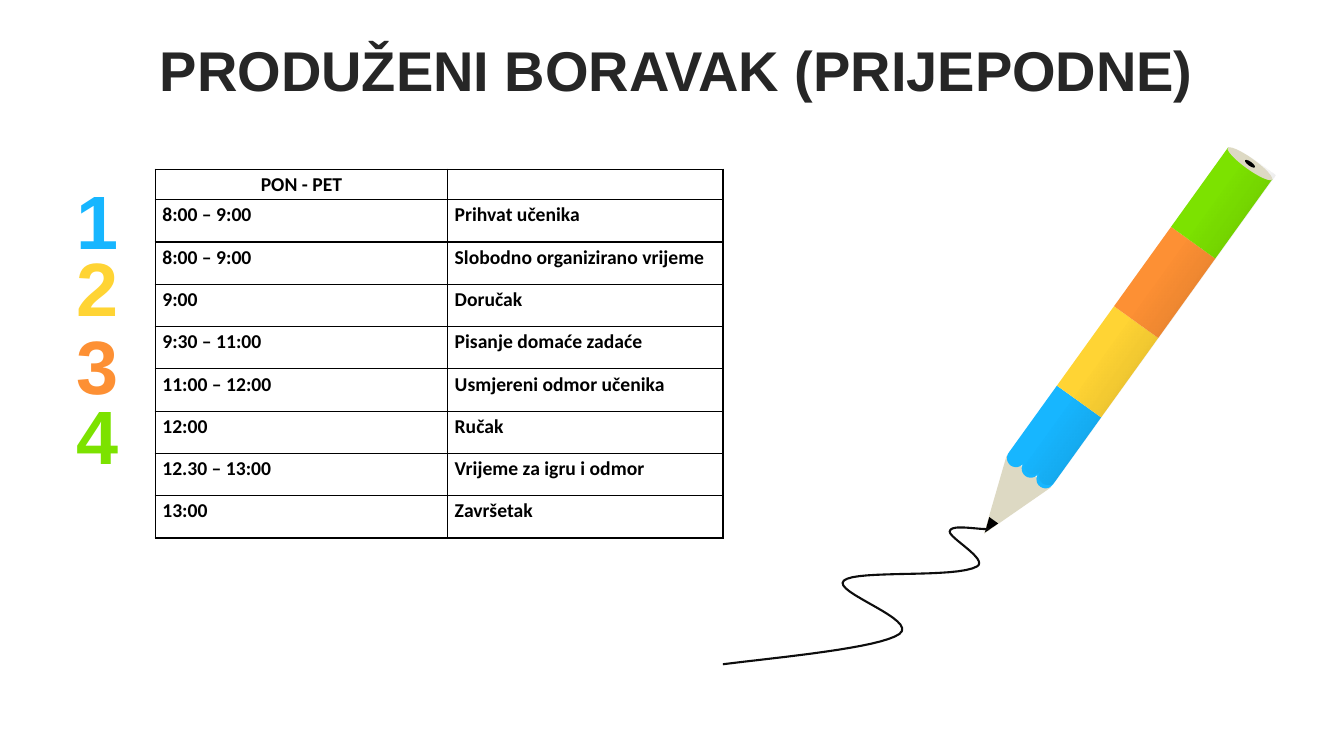
from math import cos, pi, radians, sin

from lxml import etree
from pptx import Presentation
from pptx.dml.color import RGBColor
from pptx.enum.shapes import MSO_SHAPE
from pptx.enum.text import MSO_ANCHOR, PP_ALIGN
from pptx.oxml.ns import qn
from pptx.util import Inches, Pt

RECTANGLE, TRIANGLE, OVAL = MSO_SHAPE.RECTANGLE, MSO_SHAPE.ISOSCELES_TRIANGLE, MSO_SHAPE.OVAL
MIDDLE, CENTER, LEFT = MSO_ANCHOR.MIDDLE, PP_ALIGN.CENTER, PP_ALIGN.LEFT
BLUE, YELLOW, ORANGE, GREEN = "17B6FF", "FFD434", "FD9034", "7CE200"
WOOD, BLACK, INK = "DDD9C3", "000000", "0D0D0D"


def color(hex_code):
    return RGBColor.from_string(hex_code)


def add_run(paragraph, text, font_name, size, hex_code):
    run = paragraph.add_run()
    run.text = text
    run.font.name = font_name
    run.font.size = Pt(size)
    run.font.bold = True
    run.font.color.rgb = color(hex_code)


presentation = Presentation()
presentation.slide_width = Inches(13.33)
presentation.slide_height = Inches(7.5)
slide = presentation.slides.add_slide(presentation.slide_layouts[5])
shapes = slide.shapes

# Title
title = shapes.title
title.left, title.top, title.width, title.height = map(Inches, (0.38, 0.33, 12.66, 0.79))
title.text_frame.vertical_anchor = MIDDLE
paragraph = title.text_frame.paragraphs[0]
paragraph.alignment = CENTER
paragraph.line_spacing = 0.9
add_run(paragraph, "PRODUŽENI BORAVAK (PRIJEPODNE)", "Arial", 40, "262626")

# Coloured numbers
numbers = [("1", 1.72, BLUE), ("2", 2.38, YELLOW), ("3", 3.16, ORANGE), ("4", 3.85, GREEN)]
for number, top, hex_code in numbers:
    box = shapes.add_textbox(Inches(0.76), Inches(top), Inches(0.47), Inches(0.91))
    frame = box.text_frame
    frame.word_wrap = True
    frame.vertical_anchor = MIDDLE
    frame.margin_left = frame.margin_right = frame.margin_top = frame.margin_bottom = 0
    add_run(frame.paragraphs[0], number, "Arial", 54, hex_code)

# Pencil: parts sit along a tilted axis, measured from the middle of the yellow band
TILT = 35.7
AXIS_X, AXIS_Y = 10.985, 3.59
PENCIL_WIDTH, BAND = 0.54, 0.97
SCALLOP = PENCIL_WIDTH / 6
# preset (None for a body with a scalloped end), distance, width, height, fill (None for shading)
pencil_parts = [
    (TRIANGLE, -1.72, PENCIL_WIDTH, 0.76, WOOD),
    (None, -0.94, PENCIL_WIDTH, 0.91, BLUE),
    (RECTANGLE, 0, PENCIL_WIDTH, BAND, YELLOW),
    (RECTANGLE, BAND, PENCIL_WIDTH, BAND, ORANGE),
    (RECTANGLE, 2 * BAND, PENCIL_WIDTH, BAND, GREEN),
    (TRIANGLE, -2.01, 0.11, 0.15, BLACK),
    (None, 0.56, PENCIL_WIDTH, 3.82, None),
    (OVAL, 2.42, PENCIL_WIDTH, 0.11, WOOD),
    (OVAL, 2.42, 0.12, 0.04, BLACK),
]
for preset, distance, width, height, hex_code in pencil_parts:
    left = AXIS_X + distance * sin(radians(TILT)) - width / 2
    top = AXIS_Y - distance * cos(radians(TILT)) - height / 2
    if preset is None:
        outline = [(left + width, top)]
        for scallop in range(3):
            center_x = left + width - SCALLOP * (2 * scallop + 1)
            for step in range(13):
                angle = pi * step / 12
                outline.append((center_x + SCALLOP * cos(angle),
                                top + height - SCALLOP + SCALLOP * sin(angle)))
        builder = shapes.build_freeform(Inches(left), Inches(top))
        builder.add_line_segments([(Inches(x), Inches(y)) for x, y in outline], close=True)
        shape = builder.convert_to_shape()
    else:
        shape = shapes.add_shape(preset, Inches(left), Inches(top), Inches(width), Inches(height))
    shape.rotation = TILT + 180 if preset == TRIANGLE else TILT
    shape.shadow.inherit = False
    shape.line.fill.background()
    if hex_code:
        shape.fill.solid()
        shape.fill.fore_color.rgb = color(hex_code)
    else:
        shape.fill.gradient()
        shape.fill.gradient_angle = 0
        for stop, position, opacity in zip(shape.fill.gradient_stops, (0.48, 1), (0, 39)):
            stop.position = position
            stop.color.rgb = color(BLACK)
            stop_color = shape._element.findall(".//" + qn("a:gs") + "/" + qn("a:srgbClr"))[-1]
            if opacity == 0:
                stop_color = shape._element.find(".//" + qn("a:gs") + "/" + qn("a:srgbClr"))
            etree.SubElement(stop_color, qn("a:alpha"), val=str(opacity * 1000))

# Scribbled line: each curve lists two control points and an end point
scribble_start = (9.81, 5.25)
scribble_curves = [
    ((9.66, 5.25), (9.44, 5.2), (9.42, 5.27)),
    ((9.4, 5.33), (9.81, 5.55), (9.69, 5.62)),
    ((9.48, 5.74), (8.49, 5.65), (8.37, 5.76)),
    ((8.24, 5.87), (9.12, 6.15), (8.92, 6.29)),
    ((8.72, 6.43), (7.73, 6.52), (7.17, 6.59)),
]
scribble_points = [scribble_start]
for curve in scribble_curves:
    corners = (scribble_points[-1], *curve)
    for step in range(1, 17):
        t = step / 16
        weights = ((1 - t) ** 3, 3 * t * (1 - t) ** 2, 3 * t ** 2 * (1 - t), t ** 3)
        scribble_points.append(tuple(
            sum(weight * corner[axis] for weight, corner in zip(weights, corners))
            for axis in (0, 1)))
builder = shapes.build_freeform(*map(Inches, scribble_start))
builder.add_line_segments([(Inches(x), Inches(y)) for x, y in scribble_points[1:]], close=False)
scribble = builder.convert_to_shape()
scribble.shadow.inherit = False
scribble.fill.background()
scribble.line.color.rgb = color(INK)
scribble.line.width = Pt(1.5)

# Timetable
schedule = [
    ("PON - PET", ""),
    ("8:00 – 9:00", "Prihvat učenika"),
    ("8:00 – 9:00", "Slobodno organizirano vrijeme"),
    ("9:00", "Doručak"),
    ("9:30 – 11:00", "Pisanje domaće zadaće"),
    ("11:00 – 12:00", "Usmjereni odmor učenika"),
    ("12:00", "Ručak"),
    ("12.30 – 13:00", "Vrijeme za igru i odmor"),
    ("13:00", "Završetak"),
]
table = shapes.add_table(len(schedule), 2, Inches(1.54), Inches(1.68),
                         Inches(5.63), Inches(3.64)).table
table.first_row = table.horz_banding = False
table.columns[0].width, table.columns[1].width = Inches(2.9), Inches(2.73)
for row_index, entries in enumerate(schedule):
    table.rows[row_index].height = Inches(0.42 if row_index else 0.27)
    for column_index, text in enumerate(entries):
        cell = table.cell(row_index, column_index)
        cell.margin_left = cell.margin_right = Inches(0.07)
        cell.margin_top = cell.margin_bottom = 0
        paragraph = cell.text_frame.paragraphs[0]
        paragraph.alignment = LEFT if row_index else CENTER
        paragraph.line_spacing = 1.15
        add_run(paragraph, text, "Calibri", 14, BLACK)
        properties = cell._tc.get_or_add_tcPr()
        for side in ("a:lnL", "a:lnR", "a:lnT", "a:lnB"):
            border = etree.SubElement(properties, qn(side), w=str(Pt(1)))
            border_fill = etree.SubElement(border, qn("a:solidFill"))
            etree.SubElement(border_fill, qn("a:srgbClr"), val=BLACK)
        cell.fill.background()

presentation.save("out.pptx")
